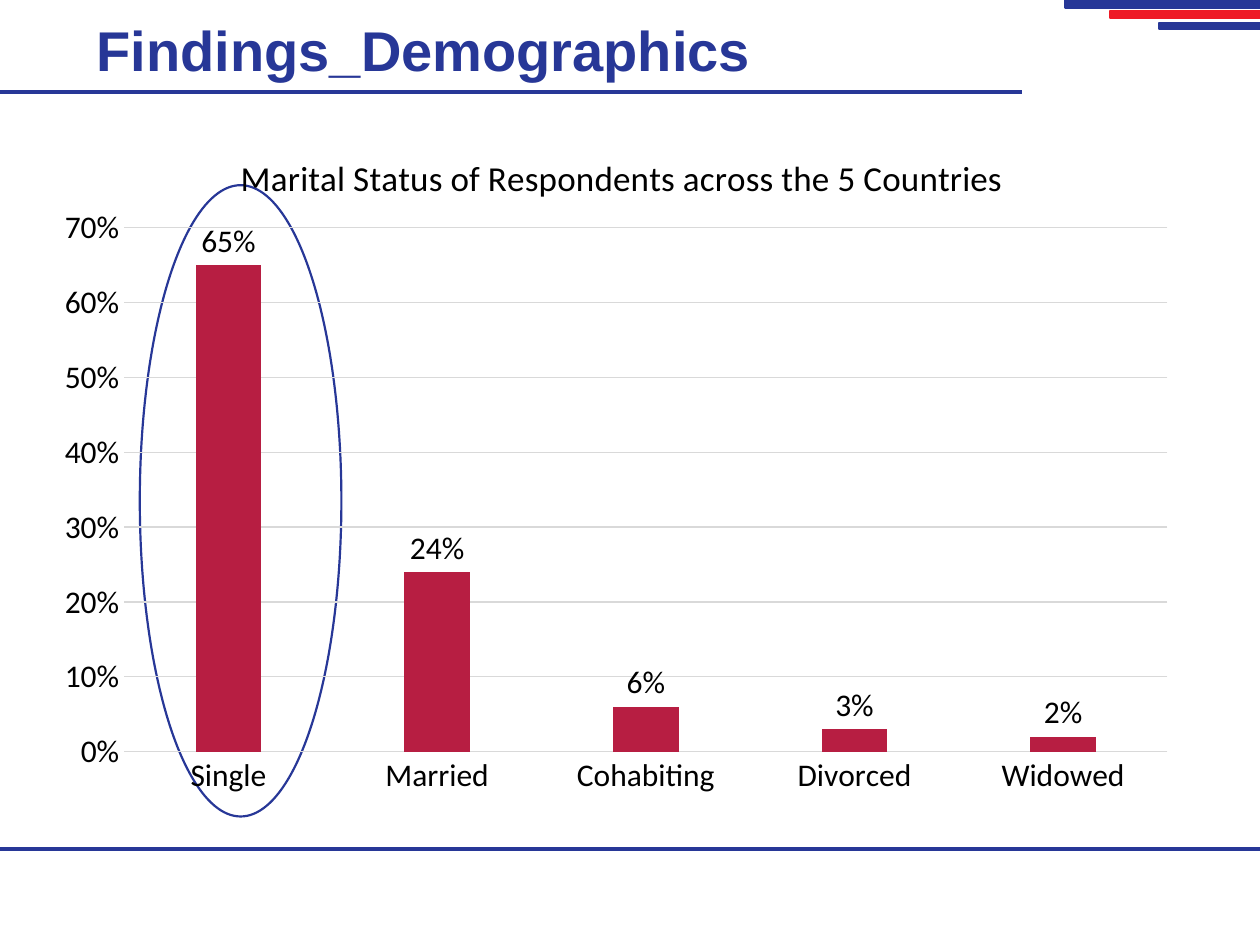
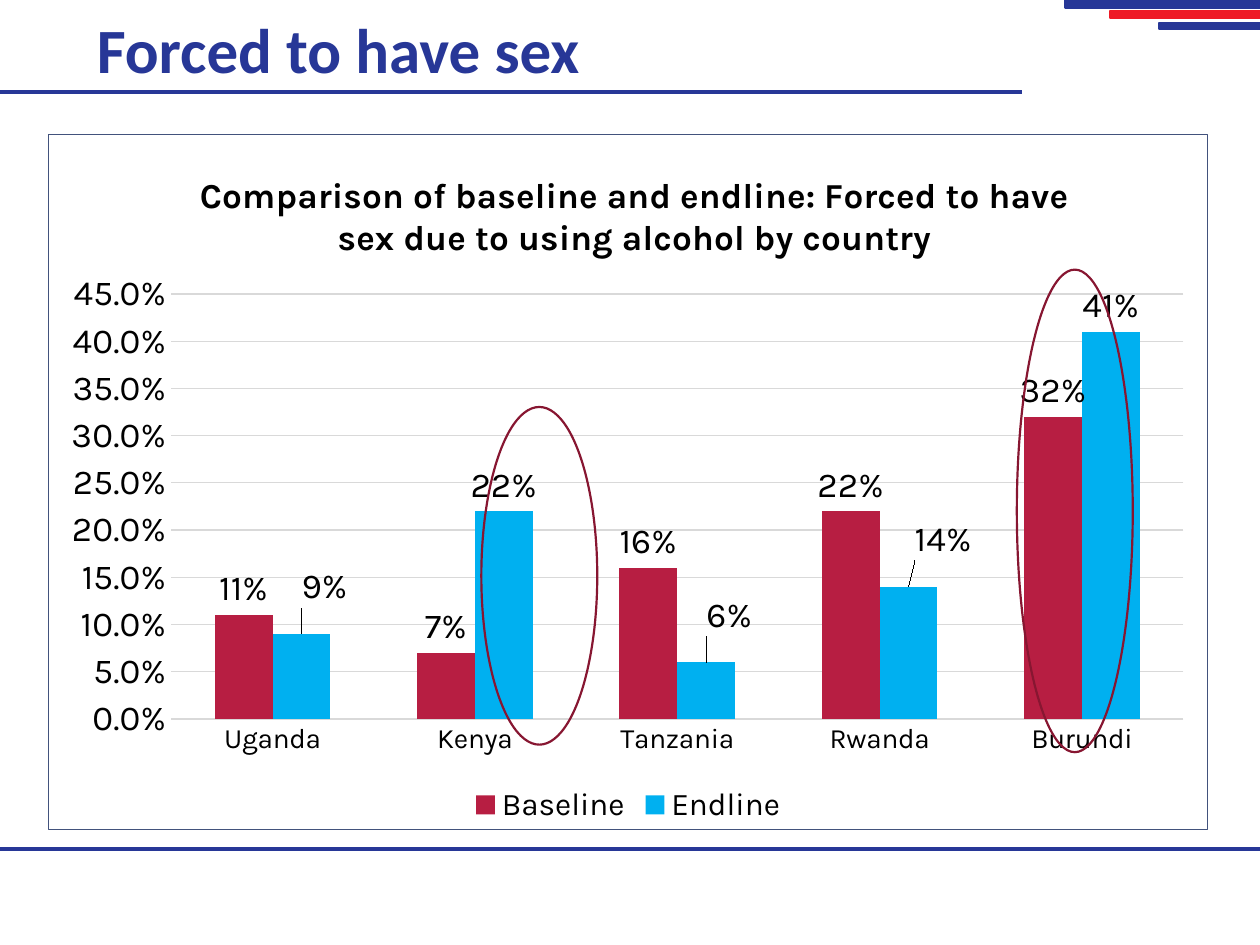
from lxml import etree
from pptx import Presentation
from pptx.chart.data import CategoryChartData
from pptx.dml.color import RGBColor
from pptx.enum.chart import XL_CHART_TYPE, XL_LABEL_POSITION, XL_LEGEND_POSITION, XL_TICK_MARK
from pptx.enum.shapes import MSO_CONNECTOR, MSO_SHAPE
from pptx.enum.text import MSO_ANCHOR
from pptx.oxml import parse_xml
from pptx.oxml.ns import nsdecls, qn
from pptx.util import Inches, Pt

COLUMNS = XL_CHART_TYPE.COLUMN_CLUSTERED
OUTSIDE_END = XL_LABEL_POSITION.OUTSIDE_END
LEGEND_BOTTOM = XL_LEGEND_POSITION.BOTTOM
NO_TICK = XL_TICK_MARK.NONE
STRAIGHT = MSO_CONNECTOR.STRAIGHT
RECTANGLE, OVAL = MSO_SHAPE.RECTANGLE, MSO_SHAPE.OVAL
MIDDLE = MSO_ANCHOR.MIDDLE

NAVY = RGBColor(0x27, 0x37, 0x97)
RED = RGBColor(0xEE, 0x1A, 0x26)
CRIMSON = RGBColor(0xB7, 0x1E, 0x42)
MAROON = RGBColor(0x87, 0x16, 0x31)
SKY = RGBColor(0x00, 0xB0, 0xF0)
GREY = RGBColor(0xD9, 0xD9, 0xD9)
SLATE = RGBColor(0x42, 0x52, 0x7C)
BLACK = RGBColor(0, 0, 0)
WHITE = RGBColor(0xFF, 0xFF, 0xFF)

WIDTH, HEIGHT = 10, 7.5
RULES = [(0.73, 8.11, 2.5), (6.74, WIDTH, 2.25)]
CORNER_BARS = [(8.45, 0, 0.06, NAVY), (8.81, 0.09, 0.05, RED), (9.2, 0.18, 0.05, NAVY)]

SLIDES = [
    {
        "title": ("Findings_Demographics", "Arial", 32),
        "rings_behind": [(1.11, 1.47, 1.6, 5.01)],
        "rings_front": [],
        "ring_color": NAVY,
        "chart": {
            "box": (0.33, 0.95, 9.11, 5.47),
            "plot": (0.072, 0.157, 0.909, 0.76),
            "heading": "Marital Status of Respondents across the 5 Countries",
            "heading_at": (0.168, 0.04),
            "heading_bold": False,
            "font": "Calibri",
            "sizes": {"category": 18, "value": 18, "label": 18},
            "axis_format": "0%",
            "axis_max": 0.7,
            "axis_step": 0.1,
            "axis_line": True,
            "gap": 219,
            "overlap": -27,
            "framed": False,
            "categories": ["Single", "Married", "Cohabiting", "Divorced", "Widowed"],
            "series": [("Series 1", CRIMSON, [0.65, 0.24, 0.06, 0.03, 0.02], {})],
        },
    },
    {
        "title": ("Forced to have sex", "Calibri", 36),
        "rings_behind": [],
        "rings_front": [(3.82, 3.23, 0.92, 2.68), (8.07, 2.14, 0.92, 3.83)],
        "ring_color": MAROON,
        "chart": {
            "box": (0.38, 1.06, 9.21, 5.53),
            "plot": (0.106, 0.23, 0.873, 0.611),
            "heading": "Comparison of baseline and endline: Forced to have "
                       "sex due to using alcohol by country",
            "heading_at": (0.125, 0.045),
            "heading_bold": True,
            "font": "Karla",
            "sizes": {"category": 16, "value": 20, "label": 20, "legend": 18},
            "axis_format": "0.0%",
            "axis_max": 0.45,
            "axis_step": 0.05,
            "axis_line": False,
            "gap": 150,
            "overlap": 0,
            "framed": True,
            "categories": ["Uganda", "Kenya", "Tanzania", "Rwanda", "Burundi"],
            "series": [
                ("Baseline", CRIMSON, [0.11, 0.07, 0.16, 0.22, 0.32], {}),
                ("Endline", SKY, [0.09, 0.22, 0.06, 0.14, 0.41],
                 {0: (0.02, -0.03), 2: (0.02, -0.03), 3: (0.03, -0.03)}),
            ],
        },
    },
]


def inches(lengths):
    return [Inches(length) for length in lengths]


def style_font(font, name, size, color=BLACK, bold=False):
    font.name, font.size, font.bold = name, Pt(size), bold
    font.color.rgb = color


def add_outline(slide, kind, box, color, fill=None):
    outline = slide.shapes.add_shape(kind, *inches(box))
    outline.shadow.inherit = False
    if fill is None:
        outline.fill.background()
    else:
        outline.fill.solid()
        outline.fill.fore_color.rgb = fill
    outline.line.color.rgb = color
    outline.line.width = Pt(1.25)


def add_frame(slide, title):
    for y, end, weight in RULES:
        rule = slide.shapes.add_connector(STRAIGHT, *inches((0, y, end, y)))
        rule.line.color.rgb = NAVY
        rule.line.width = Pt(weight)
        etree.SubElement(rule._element.spPr, qn("a:effectLst"))
    for left, top, height, color in CORNER_BARS:
        add_outline(slide, RECTANGLE, (left, top, WIDTH - left, height), color, color)
    text, font, size = title
    frame = slide.shapes.add_textbox(*inches((0.67, 0.11, 8.14, 0.62))).text_frame
    frame.word_wrap = True
    frame.vertical_anchor = MIDDLE
    frame.text = text
    frame.paragraphs[0].line_spacing = 0.9
    style_font(frame.paragraphs[0].runs[0].font, font, size, NAVY, True)


def manual_layout(places, inner=False, edge=True):
    names = "xywh"[:len(places)]
    target = '<c:layoutTarget val="inner"/>' if inner else ""
    modes = "".join(f'<c:{n}Mode val="edge"/>' for n in "xy") if edge else ""
    values = "".join(f'<c:{n} val="{v}"/>' for n, v in zip(names, places))
    return parse_xml(f'<c:layout {nsdecls("c")}><c:manualLayout>{target}{modes}{values}'
                     '</c:manualLayout></c:layout>')


def set_layout(parent, layout, before):
    for old in parent.findall(qn("c:layout")):
        parent.remove(old)
    parent.find(qn(before)).addprevious(layout)


def style_axes(chart, spec):
    sizes = spec["sizes"]
    categories, values = chart.category_axis, chart.value_axis
    for axis, size in ((categories, sizes["category"]), (values, sizes["value"])):
        axis.major_tick_mark = axis.minor_tick_mark = NO_TICK
        style_font(axis.tick_labels.font, spec["font"], size)
        axis.format.line.fill.background()
    if spec["axis_line"]:
        categories.format.line.color.rgb = GREY
        categories.format.line.width = Pt(0.75)
    values.minimum_scale, values.maximum_scale = 0, spec["axis_max"]
    values.major_unit = spec["axis_step"]
    values.tick_labels.number_format = spec["axis_format"]
    values.tick_labels.number_format_is_linked = False
    values.has_major_gridlines = True
    values.major_gridlines.format.line.color.rgb = GREY
    values.major_gridlines.format.line.width = Pt(0.75)


def style_series(plot, spec):
    font, size = spec["font"], spec["sizes"]["label"]
    plot.gap_width, plot.overlap = spec["gap"], spec["overlap"]
    plot.vary_by_categories = False
    for series, (_, color, _, shifts) in zip(plot.series, spec["series"]):
        series.format.fill.solid()
        series.format.fill.fore_color.rgb = color
        series.invert_if_negative = False
        labels = series.data_labels
        labels.show_value = True
        labels.number_format, labels.number_format_is_linked = "0%", False
        labels.position = OUTSIDE_END
        style_font(labels.font, font, size)
        for index, shift in shifts.items():
            label = series.points[index].data_label
            style_font(label.font, font, size)
            label.position = OUTSIDE_END
            entry = labels._element.xpath(f'c:dLbl[c:idx/@val="{index}"]')[0]
            entry.find(qn("c:idx")).addnext(manual_layout(shift, edge=False))


def add_column_chart(slide, spec):
    data = CategoryChartData(number_format="0%")
    data.categories = spec["categories"]
    for name, _, values, _ in spec["series"]:
        data.add_series(name, values)
    chart = slide.shapes.add_chart(COLUMNS, *inches(spec["box"]), data).chart
    style_font(chart.font, spec["font"], 10)
    style_axes(chart, spec)
    style_series(chart.plots[0], spec)

    chart.has_title = True
    heading = chart.chart_title
    heading.text_frame.text = spec["heading"]
    style_font(heading.text_frame.paragraphs[0].runs[0].font, spec["font"], 20,
               bold=spec["heading_bold"])
    heading.include_in_layout = False
    set_layout(heading._element, manual_layout(spec["heading_at"]), "c:overlay")
    plot_area = chart._chartSpace.chart.plotArea
    set_layout(plot_area, manual_layout(spec["plot"], inner=True), "c:barChart")

    chart.has_legend = "legend" in spec["sizes"]
    if chart.has_legend:
        chart.legend.position = LEGEND_BOTTOM
        chart.legend.include_in_layout = False
        style_font(chart.legend.font, spec["font"], spec["sizes"]["legend"])
    if spec["framed"]:
        chart._chartSpace.chart.addnext(parse_xml(
            f'<c:spPr {nsdecls("c", "a")}>'
            f'<a:solidFill><a:srgbClr val="{WHITE}"/></a:solidFill>'
            f'<a:ln w="{Pt(0.75)}"><a:solidFill><a:srgbClr val="{SLATE}"/></a:solidFill></a:ln>'
            '</c:spPr>'))


def main():
    deck = Presentation()
    deck.slide_width, deck.slide_height = Inches(WIDTH), Inches(HEIGHT)
    for content in SLIDES:
        slide = deck.slides.add_slide(deck.slide_layouts[6])
        add_frame(slide, content["title"])
        for ring in content["rings_behind"]:
            add_outline(slide, OVAL, ring, content["ring_color"])
        add_column_chart(slide, content["chart"])
        for ring in content["rings_front"]:
            add_outline(slide, OVAL, ring, content["ring_color"])
    deck.save("out.pptx")


if __name__ == "__main__":
    main()
